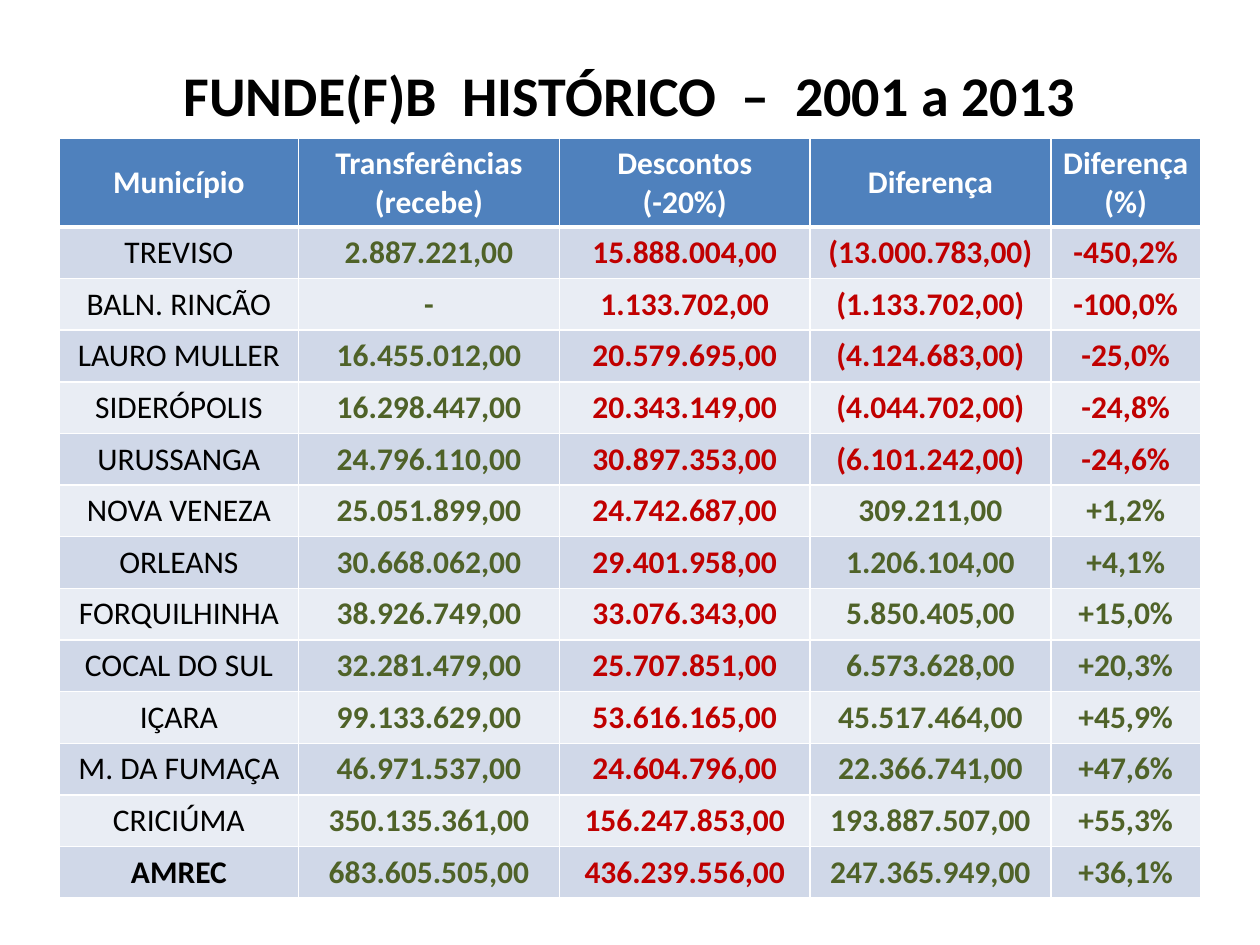
from dataclasses import dataclass
from typing import NamedTuple

from lxml.etree import SubElement
from pptx import Presentation
from pptx.dml.color import RGBColor
from pptx.enum.text import MSO_ANCHOR as Anchor, PP_ALIGN as Align
from pptx.oxml import parse_xml
from pptx.oxml.ns import nsdecls, qn
from pptx.util import Inches, Pt


@dataclass(frozen=True)
class Theme:
    font: str = "Calibri"
    title_size: int = 32
    table_size: int = 18
    black: str = "000000"
    white: str = "FFFFFF"
    header: str = "4F81BD"
    bands: tuple[str, str] = ("D0D8E8", "E9EDF4")
    gain: str = "4F6228"
    loss: str = "C00000"
    thin_border: int = 1
    header_border: int = 3


class Municipality(NamedTuple):
    name: str
    transfers: str
    discounts: str
    difference: str
    percent: str


THEME = Theme()
TITLE = "FUNDE(F)B  HISTÓRICO  –  2001 a 2013"
HEADERS = ("Município", "Transferências\n(recebe)", "Descontos\n(-20%)",
           "Diferença", "Diferença\n(%)")
COLUMN_WIDTHS = (1.9, 2.07, 1.99, 1.91, 1.19)
HEADER_HEIGHT, ROW_HEIGHT = 0.7, 0.41
SIDE_MARGIN = 0.05
TOTAL_NAME = "AMREC"
MUNICIPALITIES = (
    Municipality("TREVISO", "2.887.221,00", "15.888.004,00", "(13.000.783,00)", "-450,2%"),
    Municipality("BALN. RINCÃO", "-", "1.133.702,00", "(1.133.702,00)", "-100,0%"),
    Municipality("LAURO MULLER", "16.455.012,00", "20.579.695,00", "(4.124.683,00)", "-25,0%"),
    Municipality("SIDERÓPOLIS", "16.298.447,00", "20.343.149,00", "(4.044.702,00)", "-24,8%"),
    Municipality("URUSSANGA", "24.796.110,00", "30.897.353,00", "(6.101.242,00)", "-24,6%"),
    Municipality("NOVA VENEZA", "25.051.899,00", "24.742.687,00", "309.211,00", "+1,2%"),
    Municipality("ORLEANS", "30.668.062,00", "29.401.958,00", "1.206.104,00", "+4,1%"),
    Municipality("FORQUILHINHA", "38.926.749,00", "33.076.343,00", "5.850.405,00", "+15,0%"),
    Municipality("COCAL DO SUL", "32.281.479,00", "25.707.851,00", "6.573.628,00", "+20,3%"),
    Municipality("IÇARA", "99.133.629,00", "53.616.165,00", "45.517.464,00", "+45,9%"),
    Municipality("M. DA FUMAÇA", "46.971.537,00", "24.604.796,00", "22.366.741,00", "+47,6%"),
    Municipality("CRICIÚMA", "350.135.361,00", "156.247.853,00", "193.887.507,00", "+55,3%"),
    Municipality(TOTAL_NAME, "683.605.505,00", "436.239.556,00", "247.365.949,00", "+36,1%"),
)


def write_text(frame, text: str, size: int, color: str, bold: bool) -> None:
    frame.text = text
    for paragraph in frame.paragraphs:
        paragraph.alignment = Align.CENTER
        font = paragraph.font
        font.name, font.size, font.bold = THEME.font, Pt(size), bold
        font.color.rgb = RGBColor.from_string(color)


def set_borders(cell, top: int, bottom: int) -> None:
    """Give the cell white borders; the line elements must precede its fill."""
    properties = cell._tc.get_or_add_tcPr()
    widths = {"L": THEME.thin_border, "R": THEME.thin_border, "T": top, "B": bottom}
    for position, (side, width) in enumerate(widths.items()):
        line = parse_xml(f'<a:ln{side} {nsdecls("a")} w="{Pt(width)}"/>')
        fill = SubElement(line, qn("a:solidFill"))
        SubElement(fill, qn("a:srgbClr"), val=THEME.white)
        properties.insert(position, line)


def fill_cell(cell, text: str, fill: str, color: str, bold: bool,
              top: int = THEME.thin_border, bottom: int = THEME.thin_border) -> None:
    cell.fill.solid()
    cell.fill.fore_color.rgb = RGBColor.from_string(fill)
    cell.vertical_anchor = Anchor.MIDDLE
    cell.margin_left = cell.margin_right = Inches(SIDE_MARGIN)
    write_text(cell.text_frame, text, THEME.table_size, color, bold)
    set_borders(cell, top, bottom)


def row_colors(municipality: Municipality) -> tuple[str, ...]:
    """Text colours by column: the last two follow the sign of the balance."""
    balance = THEME.loss if municipality.percent.startswith("-") else THEME.gain
    return THEME.black, THEME.gain, THEME.loss, balance, balance


def add_title(slide) -> None:
    box = slide.shapes.add_textbox(Inches(0.5), Inches(0.31), Inches(9), Inches(0.87))
    frame = box.text_frame
    frame.word_wrap = True
    frame.vertical_anchor = Anchor.MIDDLE
    write_text(frame, TITLE, THEME.title_size, THEME.black, True)


def add_history_table(slide) -> None:
    height = HEADER_HEIGHT + ROW_HEIGHT * len(MUNICIPALITIES)
    table = slide.shapes.add_table(
        len(MUNICIPALITIES) + 1, len(HEADERS), Inches(0.47), Inches(1.1),
        Inches(sum(COLUMN_WIDTHS)), Inches(height)).table
    for column, width in zip(table.columns, COLUMN_WIDTHS):
        column.width = Inches(width)
    for row in table.rows:
        row.height = Inches(ROW_HEIGHT)
    table.rows[0].height = Inches(HEADER_HEIGHT)

    for column, header in enumerate(HEADERS):
        fill_cell(table.cell(0, column), header, THEME.header, THEME.white, True,
                  bottom=THEME.header_border)
    for index, municipality in enumerate(MUNICIPALITIES):
        top = THEME.thin_border if index else THEME.header_border
        for column, (text, color) in enumerate(zip(municipality, row_colors(municipality))):
            bold = column > 0 or text == TOTAL_NAME
            fill_cell(table.cell(index + 1, column), text, THEME.bands[index % 2],
                      color, bold, top=top)


def main() -> None:
    presentation = Presentation()
    presentation.slide_width, presentation.slide_height = Inches(10), Inches(7.5)
    slide = presentation.slides.add_slide(presentation.slide_layouts[6])
    add_title(slide)
    add_history_table(slide)
    presentation.save("out.pptx")


if __name__ == "__main__":
    main()
